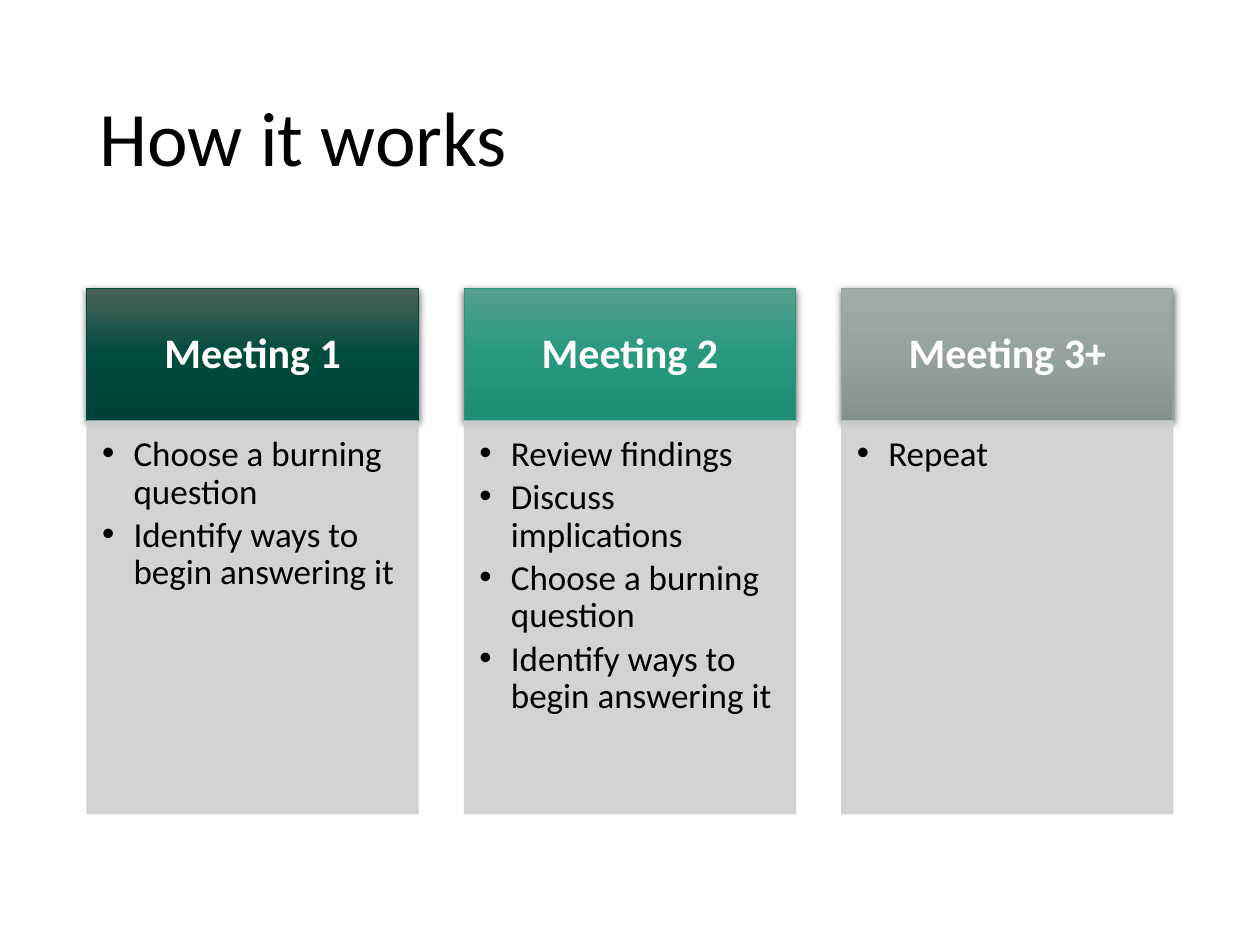
"""Builds the "How it works" slide with three meeting columns."""
from dataclasses import dataclass

from lxml.etree import SubElement
from pptx import Presentation
from pptx.dml.color import RGBColor
from pptx.enum.shapes import MSO_SHAPE
from pptx.enum.text import MSO_ANCHOR, PP_ALIGN
from pptx.oxml.ns import qn
from pptx.util import Inches, Pt

RECT = MSO_SHAPE.RECTANGLE
TOP, MIDDLE = MSO_ANCHOR.TOP, MSO_ANCHOR.MIDDLE
LEFT, CENTER = PP_ALIGN.LEFT, PP_ALIGN.CENTER


@dataclass(frozen=True)
class Theme:
    font: str = "Calibri"
    dark: str = "000000"
    light: str = "FFFFFF"
    panel: str = "CCD0CF"
    title_size: int = 44
    header_size: int = 24
    body_size: int = 20
    line_width: float = 0.5


@dataclass(frozen=True)
class Meeting:
    name: str
    gradient: tuple[str, str, str]
    outline: str
    steps: tuple[str, ...]


THEME = Theme()
MARGIN, COLUMN_WIDTH, COLUMN_PITCH = 0.69, 2.63, 2.995
HEADER_TOP, HEADER_HEIGHT, BODY_HEIGHT = 2.29, 1.05, 3.12
QUESTION_STEPS = ("Choose a burning question", "Identify ways to begin answering it")
MEETINGS = (
    Meeting("Meeting 1", ("4B645D", "004A3E", "004137"), "004A3E", QUESTION_STEPS),
    Meeting("Meeting 2", ("54A08C", "28987F", "1F8C74"), "2D937C",
            ("Review findings", "Discuss implications") + QUESTION_STEPS),
    Meeting("Meeting 3+", ("A1ACA9", "95A29E", "83918D"), "95A29E", ("Repeat",)),
)


def write(shape, lines: tuple[str, ...], size: int, color: str, anchor=MIDDLE,
          align=LEFT, bold: bool = False, insets=(0.1, 0.05, 0.1, 0.05)) -> None:
    tf = shape.text_frame
    frame_format = {"word_wrap": True, "vertical_anchor": anchor}
    sides = ("margin_left", "margin_top", "margin_right", "margin_bottom")
    frame_format.update(zip(sides, map(Inches, insets)))
    for name, value in frame_format.items():
        setattr(tf, name, value)
    for i, line in enumerate(lines):
        p = tf.paragraphs[0] if i == 0 else tf.add_paragraph()
        p.alignment, p.line_spacing = align, 0.9
        r = p.add_run()
        r.text = line
        for name, value in {"name": THEME.font, "size": Pt(size), "bold": bold}.items():
            setattr(r.font, name, value)
        r.font.color.rgb = RGBColor.from_string(color)


def add_bullets(shape) -> None:
    for p in shape.text_frame.paragraphs:
        p.space_after = Pt(3)
        props = p._p.get_or_add_pPr()
        props.set("marL", str(Inches(0.25)))
        props.set("indent", str(Inches(-0.25)))
        SubElement(props, qn("a:buFont"), typeface="Arial")
        SubElement(props, qn("a:buChar"), char="•")


def add_box(s, left: float, top: float, height: float, outline: str):
    box = s.shapes.add_shape(RECT, Inches(left), Inches(top),
                             Inches(COLUMN_WIDTH), Inches(height))
    box.shadow.inherit = False
    box.line.color.rgb = RGBColor.from_string(outline)
    box.line.width = Pt(THEME.line_width)
    return box


def add_color(parent, value: str, alpha: int = 100) -> None:
    color = SubElement(parent, qn("a:srgbClr"), val=value)
    if alpha < 100:
        SubElement(color, qn("a:alpha"), val=str(alpha * 1000))


def add_header(s, left: float, meeting: Meeting) -> None:
    header = add_box(s, left, HEADER_TOP, HEADER_HEIGHT, meeting.outline)
    header.fill.gradient()
    header.fill.gradient_angle = 270
    props = header.element.spPr
    stops = props.find(qn("a:gradFill")).find(qn("a:gsLst"))
    for stop in list(stops):
        stops.remove(stop)
    for position, color in zip((0, 50000, 100000), meeting.gradient):
        add_color(SubElement(stops, qn("a:gs"), pos=str(position)), color)
    shadow = SubElement(props.find(qn("a:effectLst")), qn("a:outerShdw"),
                        blurRad=str(Pt(4.5)), dist=str(Pt(1.5)),
                        dir="5400000", algn="ctr", rotWithShape="0")
    add_color(shadow, THEME.dark, 63)
    write(header, (meeting.name,), THEME.header_size, THEME.light, align=CENTER,
          bold=True, insets=(0.19, 0.11, 0.19, 0.11))


def add_body(s, left: float, meeting: Meeting) -> None:
    body = add_box(s, left, HEADER_TOP + HEADER_HEIGHT, BODY_HEIGHT, THEME.panel)
    body.fill.solid()
    body.fill.fore_color.rgb = RGBColor.from_string(THEME.panel)
    for color in body.element.spPr.iter(qn("a:srgbClr")):
        SubElement(color, qn("a:alpha"), val="90000")
    write(body, meeting.steps, THEME.body_size, THEME.dark, anchor=TOP,
          insets=(0.12, 0.12, 0.16, 0.17))
    add_bullets(body)


def main() -> None:
    prs = Presentation()
    prs.slide_width, prs.slide_height = Inches(10), Inches(7.5)
    s = prs.slides.add_slide(prs.slide_layouts[6])
    title = s.shapes.add_textbox(Inches(MARGIN), Inches(0.4), Inches(8.62), Inches(1.45))
    write(title, ("How it works",), THEME.title_size, THEME.dark)
    for i, meeting in enumerate(MEETINGS):
        left = MARGIN + i * COLUMN_PITCH
        add_header(s, left, meeting)
        add_body(s, left, meeting)
    prs.save("out.pptx")


if __name__ == "__main__":
    main()
